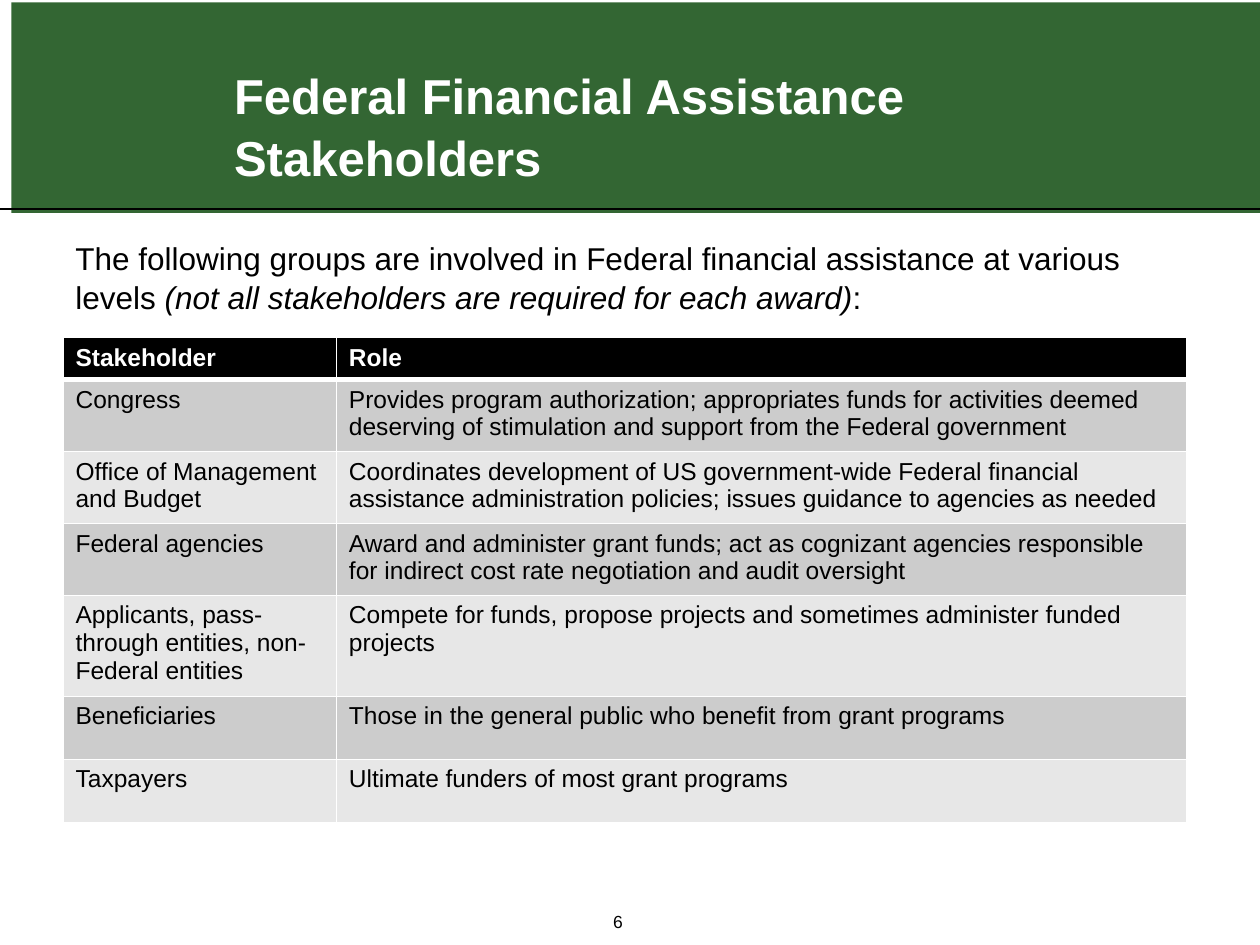
from dataclasses import dataclass

from lxml import etree
from pptx import Presentation
from pptx import util as u
from pptx.dml.color import RGBColor
from pptx.enum import shapes, text
from pptx.oxml.ns import qn

COLOURS = {
    "green": "336633",
    "black": "000000",
    "white": "FFFFFF",
    "dark band": "CCCCCC",
    "light band": "E7E7E7",
}
FONT = "Arial"
COLUMN_WIDTHS = (156.24, 486)


@dataclass
class Span:
    words: str
    size: float
    colour: str = "black"
    bold: bool = False
    italic: bool = False


@dataclass
class TextBlock:
    left: float
    top: float
    width: float
    height: float
    spans: list[Span]
    anchor: text.MSO_ANCHOR = text.MSO_ANCHOR.TOP
    align: text.PP_ALIGN = text.PP_ALIGN.LEFT
    line_spacing: float = 1.0


@dataclass
class Stakeholder:
    name: str
    role: str
    height: float


HEADER = Stakeholder("Stakeholder", "Role", 23.6)
STAKEHOLDERS = [
    Stakeholder("Congress", "Provides program authorization; appropriates funds for activities "
                "deemed deserving of stimulation and support from the Federal government", 41.1),
    Stakeholder("Office of Management and Budget", "Coordinates development of US government-wide "
                "Federal financial assistance administration policies; issues guidance to "
                "agencies as needed", 41.1),
    Stakeholder("Federal agencies", "Award and administer grant funds; act as cognizant agencies "
                "responsible for indirect cost rate negotiation and audit oversight", 41.1),
    Stakeholder("Applicants, pass-through entities, non-Federal entities", "Compete for funds, "
                "propose projects and sometimes administer funded projects", 57.3),
    Stakeholder("Beneficiaries", "Those in the general public who benefit from grant programs", 36),
    Stakeholder("Taxpayers", "Ultimate funders of most grant programs", 36),
]

TEXT_BLOCKS = [
    # Title
    TextBlock(126.72, 23.04, 455.04, 87.12,
              [Span("Federal Financial Assistance Stakeholders", 28, "white", bold=True)],
              anchor=text.MSO_ANCHOR.BOTTOM, line_spacing=1.05),
    # Introduction
    TextBlock(36, 131.76, 648, 356.4,
              [Span("The following groups are involved in Federal financial assistance "
                    "at various levels ", 18),
               Span("(not all stakeholders are required for each award)", 18, italic=True),
               Span(":", 18)],
              line_spacing=1.05),
    # Page number
    TextBlock(286.56, 524.16, 133.2, 12.24, [Span("6", 10)],
              anchor=text.MSO_ANCHOR.BOTTOM, align=text.PP_ALIGN.CENTER),
]


def colour(name: str) -> RGBColor:
    return RGBColor.from_string(COLOURS[name])


def add_span(para, span: Span) -> None:
    run = para.add_run()
    run.text = span.words
    run.font.name = FONT
    run.font.size = u.Pt(span.size)
    run.font.bold = span.bold
    run.font.italic = span.italic
    run.font.color.rgb = colour(span.colour)


def add_text(page, block: TextBlock) -> None:
    box = page.shapes.add_textbox(*map(u.Pt, (block.left, block.top, block.width, block.height)))
    frame = box.text_frame
    frame.word_wrap = True
    frame.vertical_anchor = block.anchor
    para = frame.paragraphs[0]
    para.alignment = block.align
    para.line_spacing = block.line_spacing
    for span in block.spans:
        add_span(para, span)


def add_banner(page) -> None:
    banner = page.shapes.add_shape(shapes.MSO_SHAPE.RECTANGLE,
                                   u.Pt(6.48), u.Pt(1.44), u.Pt(720), u.Pt(120.24))
    banner.shadow.inherit = False
    banner.fill.solid()
    banner.fill.fore_color.rgb = colour("green")
    banner.line.fill.background()

    rule = page.shapes.add_connector(shapes.MSO_CONNECTOR.STRAIGHT,
                                     u.Pt(0), u.Pt(119.52), u.Pt(720), u.Pt(119.52))
    rule.line.color.rgb = colour("black")
    rule.line.width = u.Pt(0.75)
    etree.SubElement(rule._element.spPr, qn("a:effectLst"))


def set_borders(cell, widths: dict[str, float]) -> None:
    properties = cell._tc.get_or_add_tcPr()
    for position, (side, width) in enumerate(widths.items()):
        border = etree.Element(qn(f"a:{side}"), w=str(u.Pt(width)))
        fill = etree.SubElement(border, qn("a:solidFill"))
        etree.SubElement(fill, qn("a:srgbClr"), val=COLOURS["white"])
        properties.insert(position, border)


def add_stakeholder_table(page) -> None:
    entries = [HEADER, *STAKEHOLDERS]
    frame = page.shapes.add_table(len(entries), len(COLUMN_WIDTHS), u.Pt(36), u.Pt(192.96),
                                  u.Pt(sum(COLUMN_WIDTHS)),
                                  u.Pt(sum(entry.height for entry in entries)))
    table = frame.table
    for column, width in zip(table.columns, COLUMN_WIDTHS):
        column.width = u.Pt(width)
    for index, entry in enumerate(entries):
        is_header = index == 0
        band = "black" if is_header else "dark band" if index % 2 else "light band"
        row = table.rows[index]
        row.height = u.Pt(entry.height)
        for cell, words in zip(row.cells, (entry.name, entry.role)):
            cell.fill.solid()
            cell.fill.fore_color.rgb = colour(band)
            set_borders(cell, {"lnL": 1, "lnR": 1, "lnT": 3 if index == 1 else 1,
                               "lnB": 3 if is_header else 1})
            add_span(cell.text_frame.paragraphs[0],
                     Span(words, 14, "white" if is_header else "black", bold=is_header))


def main() -> None:
    deck = Presentation()
    deck.slide_width, deck.slide_height = u.Pt(720), u.Pt(540)
    page = deck.slides.add_slide(deck.slide_layouts[6])
    add_banner(page)
    for block in TEXT_BLOCKS:
        add_text(page, block)
    add_stakeholder_table(page)
    deck.save("out.pptx")


if __name__ == "__main__":
    main()
